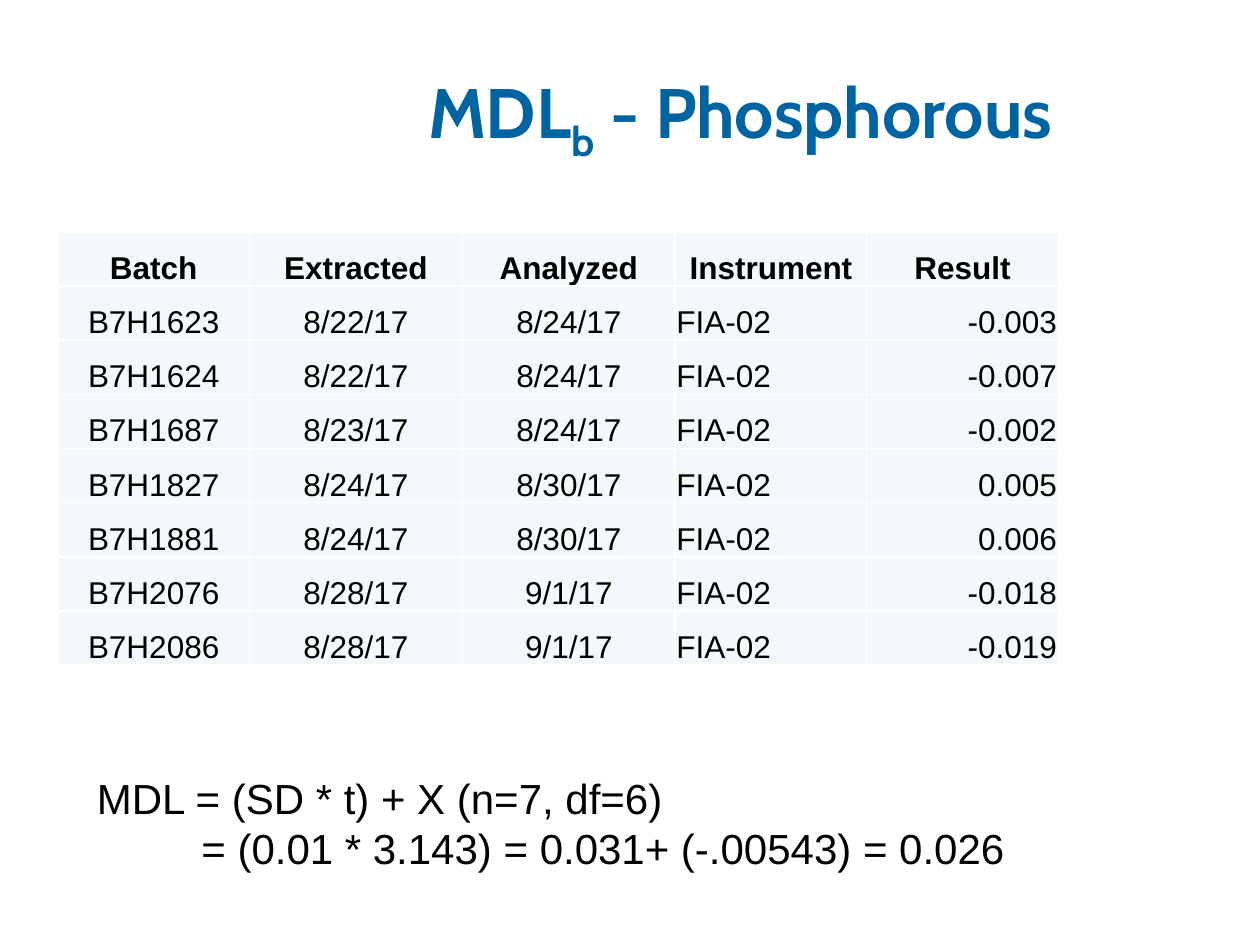
from pptx import Presentation, util as u
from pptx.dml.color import RGBColor
from pptx.enum import text as t
from pptx.oxml import parse_xml
from pptx.oxml.ns import nsdecls

BLUE = RGBColor(0x00, 0x64, 0xA2)
BLACK = RGBColor(0, 0, 0)
PALE = RGBColor(0xF3, 0xF9, 0xFA)
LEFT, MID, RIGHT = t.PP_ALIGN.LEFT, t.PP_ALIGN.CENTER, t.PP_ALIGN.RIGHT

HEAD = ["Batch", "Extracted", "Analyzed", "Instrument", "Result"]
DATA = [
    ["B7H1623", "8/22/17", "8/24/17", "FIA-02", "-0.003"],
    ["B7H1624", "8/22/17", "8/24/17", "FIA-02", "-0.007"],
    ["B7H1687", "8/23/17", "8/24/17", "FIA-02", "-0.002"],
    ["B7H1827", "8/24/17", "8/30/17", "FIA-02", "0.005"],
    ["B7H1881", "8/24/17", "8/30/17", "FIA-02", "0.006"],
    ["B7H2076", "8/28/17", "9/1/17", "FIA-02", "-0.018"],
    ["B7H2086", "8/28/17", "9/1/17", "FIA-02", "-0.019"],
]
ALIGN = [MID, MID, MID, LEFT, RIGHT]
COLS = [1.52, 1.69, 1.69, 1.52, 1.52]
ROW = 0.43


def style(font, name, size, color, bold=False):
    font.name, font.size, font.bold = name, u.Pt(size), bold
    font.color.rgb = color


deck = Presentation()
deck.slide_width, deck.slide_height = u.Inches(10), u.Inches(7.5)
slide = deck.slides.add_slide(deck.slide_layouts[5])

# Title with a subscript
title = slide.shapes.title
title.left, title.top = u.Inches(2.25), u.Inches(0.3)
title.width, title.height = u.Inches(7.25), u.Inches(1.25)
title.text_frame.vertical_anchor = t.MSO_ANCHOR.MIDDLE
para = title.text_frame.paragraphs[0]
para.alignment = MID
for part in ["MDL", "b", " - Phosphorous"]:
    run = para.add_run()
    run.text = part
    style(run.font, "Cabin", 40, BLUE, True)
para.runs[1].font._element.set("baseline", "-25000")

# Table of blank results
rows = [HEAD] + DATA
frame = slide.shapes.add_table(
    len(rows), len(COLS), u.Inches(0.46), u.Inches(1.84),
    u.Inches(sum(COLS)), u.Inches(ROW * len(rows)))
table = frame.table
table.first_row = table.horz_banding = False
for col, width in zip(table.columns, COLS):
    col.width = u.Inches(width)
for r, row in enumerate(rows):
    table.rows[r].height = u.Inches(ROW)
    for c, word in enumerate(row):
        cell = table.cell(r, c)
        cell.margin_left = cell.margin_right = cell.margin_top = u.Inches(0.01)
        cell.margin_bottom = 0
        cell.vertical_anchor = t.MSO_ANCHOR.BOTTOM
        for side in ["lnL", "lnR", "lnT", "lnB"]:
            cell._tc.tcPr.append(parse_xml(
                f'<a:{side} {nsdecls("a")} w="12700"><a:solidFill>'
                f'<a:srgbClr val="FFFFFF"/></a:solidFill></a:{side}>'))
        cell.fill.solid()
        cell.fill.fore_color.rgb = PALE
        cell.text_frame.text = word
        para = cell.text_frame.paragraphs[0]
        para.alignment = ALIGN[c] if r else MID
        style(para.runs[0].font, "Arial", 18, BLACK, r == 0)

# Formula, second line indented to its equals sign
box = slide.shapes.add_textbox(
    u.Inches(0.67), u.Inches(6.08), u.Inches(7.75), u.Inches(0.91))
box.text_frame.word_wrap = True
box.text_frame.text = ("MDL = (SD * t) + X (n=7, df=6)\n"
                       "= (0.01 * 3.143) = 0.031+ (-.00543) = 0.026")
for para in box.text_frame.paragraphs:
    style(para.runs[0].font, "Arial", 24, BLACK)
para._p.get_or_add_pPr().set("marL", str(u.Inches(0.83)))

deck.save("out.pptx")
